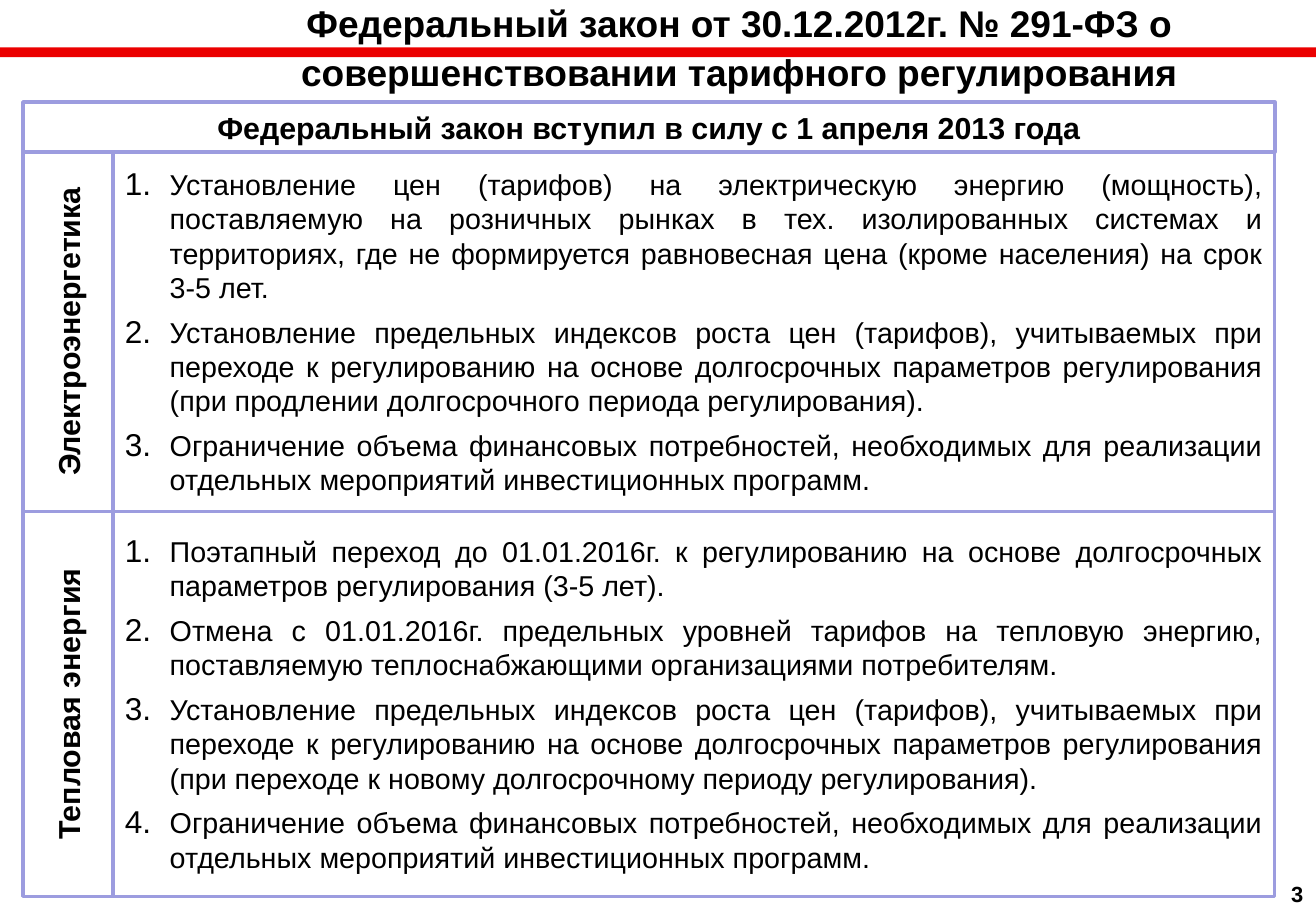
from dataclasses import dataclass

import lxml.etree
import pptx
import pptx.dml.color
import pptx.enum.shapes
import pptx.enum.text
import pptx.oxml.ns
import pptx.util

Inches = pptx.util.Inches
Pt = pptx.util.Pt
ALIGN = pptx.enum.text.PP_ALIGN
ANCHOR = pptx.enum.text.MSO_ANCHOR
qn = pptx.oxml.ns.qn


@dataclass(frozen=True)
class Theme:
    font: str = "Arial"
    ink: str = "000000"
    stripe: str = "EB0000"
    border: str = "9C9CDF"
    title_size: int = 22
    label_size: int = 18
    body_size: int = 17
    number_size: int = 13


THEME = Theme()

# Shared geometry, in inches
LEFT, LABEL_WIDTH, BODY_WIDTH = 0.19, 0.74, 9.57
HEADING_TOP, HEADING_HEIGHT = 0.84, 0.41

# Section name, height, numbered points
SECTIONS = [
    ("Электроэнергетика", 2.96, [
        "Установление цен (тарифов) на электрическую энергию (мощность), "
        "поставляемую на розничных рынках в тех. изолированных системах и "
        "территориях, где не формируется равновесная цена (кроме населения) "
        "на срок 3-5 лет.",
        "Установление предельных индексов роста цен (тарифов), учитываемых при "
        "переходе к регулированию на основе долгосрочных параметров "
        "регулирования (при продлении долгосрочного периода регулирования).",
        "Ограничение объема финансовых потребностей, необходимых для реализации "
        "отдельных мероприятий инвестиционных программ.",
    ]),
    ("Тепловая энергия", 3.17, [
        "Поэтапный переход до 01.01.2016г. к регулированию на основе "
        "долгосрочных параметров регулирования (3-5 лет).",
        "Отмена с 01.01.2016г. предельных уровней тарифов на тепловую энергию, "
        "поставляемую теплоснабжающими организациями потребителям.",
        "Установление предельных индексов роста цен (тарифов), учитываемых при "
        "переходе к регулированию на основе долгосрочных параметров "
        "регулирования (при переходе к новому долгосрочному периоду "
        "регулирования).",
        "Ограничение объема финансовых потребностей, необходимых для реализации "
        "отдельных мероприятий инвестиционных программ.",
    ]),
]


def color(value):
    return pptx.dml.color.RGBColor.from_string(value)


def format_paragraph(paragraph, size, bold=True, align=ALIGN.CENTER):
    paragraph.alignment = align
    paragraph.font.name = THEME.font
    paragraph.font.size = Pt(size)
    paragraph.font.bold = bold
    paragraph.font.color.rgb = color(THEME.ink)


def add_rectangle(slide, left, top, width, height):
    rectangle = slide.shapes.add_shape(
        pptx.enum.shapes.MSO_SHAPE.RECTANGLE,
        Inches(left), Inches(top), Inches(width), Inches(height))
    rectangle.shadow.inherit = False
    return rectangle


def add_frame(slide, left, top, width, height, line_width=2):
    """Add an outlined cell and return its text frame."""
    frame = add_rectangle(slide, left, top, width, height)
    frame.fill.background()
    frame.line.color.rgb = color(THEME.border)
    frame.line.width = Pt(line_width)
    frame.text_frame.word_wrap = True
    frame.text_frame.vertical_anchor = ANCHOR.MIDDLE
    return frame.text_frame


def number_paragraph(paragraph):
    properties = paragraph._p.get_or_add_pPr()
    indent = Inches(0.37)
    properties.set("marL", str(indent))
    properties.set("indent", str(-indent))
    lxml.etree.SubElement(properties, qn("a:buSzPct"), val="110000")
    lxml.etree.SubElement(properties, qn("a:buAutoNum"), type="arabicPeriod")


def add_title(slide, text):
    title = slide.shapes.title
    title.left, title.top = Inches(1.35), Inches(-0.08)
    title.width, title.height = Inches(9.48), Inches(0.83)
    title.text_frame.text = text
    title.text_frame.word_wrap = True
    title.text_frame.auto_size = pptx.enum.text.MSO_AUTO_SIZE.NONE
    title.text_frame.vertical_anchor = ANCHOR.TOP
    heading = title.text_frame.paragraphs[0]
    heading.line_spacing = 1.1
    format_paragraph(heading, THEME.title_size)


def add_stripe(slide):
    stripe = add_rectangle(slide, 0, 0.39, 10.84, 0.08)
    stripe.fill.solid()
    stripe.fill.fore_color.rgb = color(THEME.stripe)
    stripe.line.fill.background()
    # The stripe runs behind the title
    slide.shapes.title.element.addprevious(stripe.element)


def add_section(slide, top, name, height, points):
    label = add_frame(slide, LEFT, top, LABEL_WIDTH, height)
    label.text = name
    label._txBody.bodyPr.set("vert", "vert270")
    format_paragraph(label.paragraphs[0], THEME.label_size)

    body = add_frame(slide, LEFT + LABEL_WIDTH, top, BODY_WIDTH, height)
    body.text = "\n".join(points)
    for point in body.paragraphs:
        number_paragraph(point)
        point.space_after = Pt(6)
        format_paragraph(point, THEME.body_size, False, ALIGN.JUSTIFY)


def add_page_number(slide, number):
    page = slide.shapes.add_textbox(
        Inches(10.53), Inches(7.2), Inches(0.31), Inches(0.32)).text_frame
    page.text = number
    page.word_wrap = False
    page.auto_size = pptx.enum.text.MSO_AUTO_SIZE.SHAPE_TO_FIT_TEXT
    format_paragraph(page.paragraphs[0], THEME.number_size)


def main():
    deck = pptx.Presentation()
    deck.slide_width, deck.slide_height = Inches(10.84), Inches(7.5)
    slide = deck.slides.add_slide(deck.slide_layouts[5])

    # Title over the red stripe
    add_title(slide, "Федеральный закон от 30.12.2012г. № 291-ФЗ о "
                     "совершенствовании тарифного регулирования")
    add_stripe(slide)

    # Sections stacked below the heading
    top = HEADING_TOP + HEADING_HEIGHT
    for name, height, points in SECTIONS:
        add_section(slide, top, name, height, points)
        top += height

    add_page_number(slide, "3")

    # Heading across both columns
    effective_date = add_frame(slide, LEFT, HEADING_TOP,
                               LABEL_WIDTH + BODY_WIDTH, HEADING_HEIGHT, 2.25)
    effective_date.text = "Федеральный закон вступил в силу с 1 апреля 2013 года"
    format_paragraph(effective_date.paragraphs[0], THEME.label_size)

    deck.save("out.pptx")


if __name__ == "__main__":
    main()
